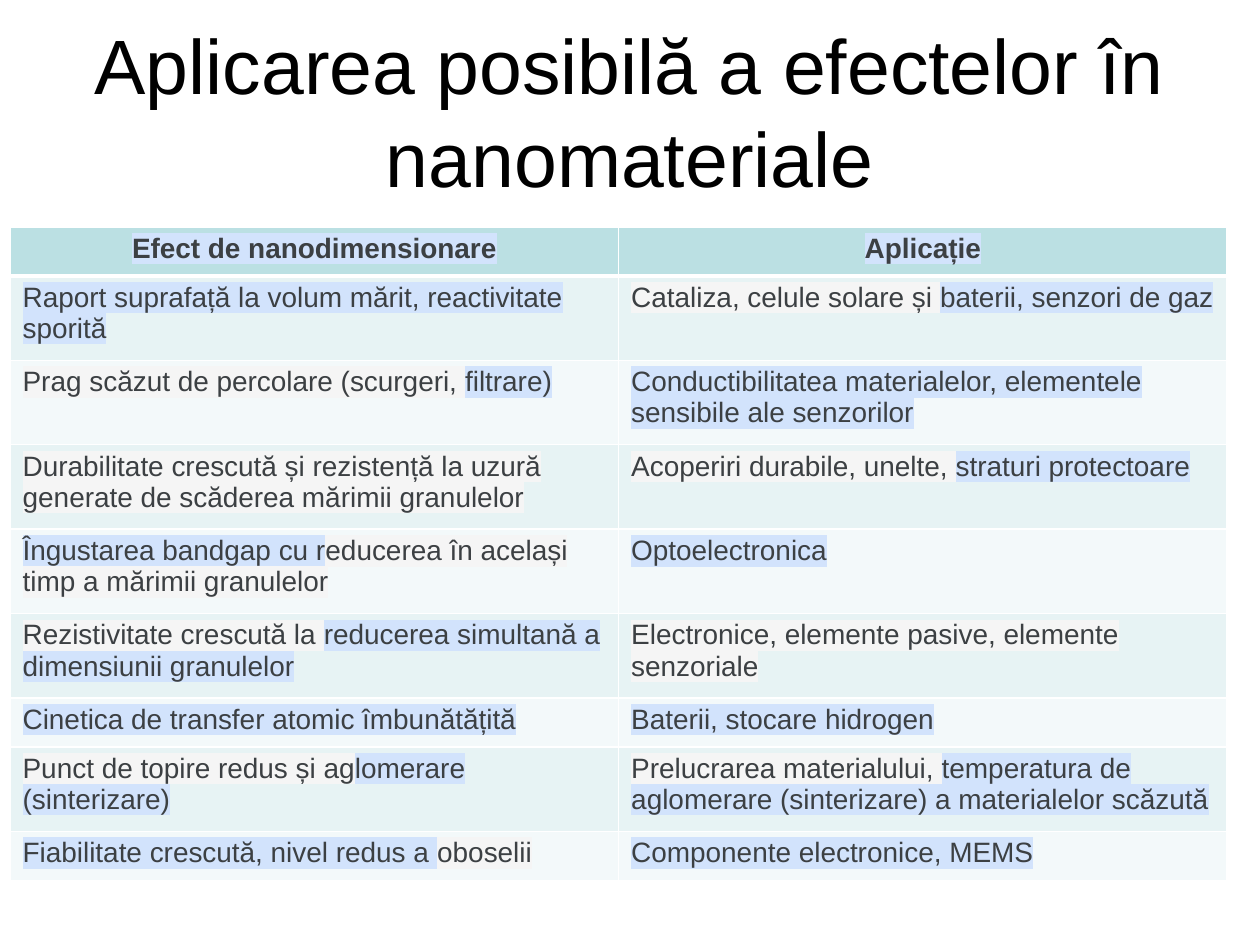
from typing import NamedTuple

from lxml.etree import SubElement
from pptx import Presentation
from pptx.dml.color import RGBColor
from pptx.enum.text import MSO_ANCHOR, MSO_AUTO_SIZE, PP_ALIGN
from pptx.oxml import parse_xml
from pptx.oxml.ns import nsdecls, qn
from pptx.util import Inches, Pt

FONT = "Arial"
BLUE, GRAY = "D2E3FC", "F5F5F5"
HEADER_FILL, BAND_FILLS = "BBE0E3", ("E7F3F4", "F3F9FA")
SHORT, TALL = 0.39, 0.67
COL_WIDTH = 4.83


class Span(NamedTuple):
    text: str
    highlight: str = BLUE


class Row(NamedTuple):
    height: float
    effect: list[Span]
    use: list[Span]


HEADER = Row(SHORT, [Span("Efect de nanodimensionare")], [Span("Aplicație")])
ROWS = [
    Row(TALL, [Span("Raport suprafață la volum mărit, reactivitate sporită")],
        [Span("Cataliza, celule solare și ", GRAY), Span("baterii, senzori de gaz")]),
    Row(TALL, [Span("Prag scăzut de percolare (scurgeri, ", GRAY), Span("filtrare)")],
        [Span("Conductibilitatea materialelor, elementele sensibile ale senzorilor")]),
    Row(TALL, [Span("Durabilitate crescută și rezistență la uzură generate de scăderea "
                    "mărimii granulelor", GRAY)],
        [Span("Acoperiri durabile, unelte, ", GRAY), Span("straturi protectoare")]),
    Row(TALL, [Span("Îngustarea bandgap cu r"),
               Span("educerea în același timp a mărimii granulelor", GRAY)],
        [Span("Optoelectronica")]),
    Row(TALL, [Span("Rezistivitate crescută la ", GRAY),
               Span("reducerea simultană a dimensiunii granulelor")],
        [Span("Electronice, elemente pasive, elemente senzoriale", GRAY)]),
    Row(SHORT, [Span("Cinetica de transfer atomic îmbunătățită")],
        [Span("Baterii, stocare hidrogen")]),
    Row(TALL, [Span("Punct de topire redus și ag", GRAY), Span("lomerare (sinterizare)")],
        [Span("Prelucrarea materialului, ", GRAY),
         Span("temperatura de aglomerare (sinterizare) a materialelor scăzută")]),
    Row(SHORT, [Span("Fiabilitate crescută, nivel redus a "), Span("oboselii", GRAY)],
        [Span("Componente electronice, MEMS")]),
]


def rgb(color: str) -> RGBColor:
    return RGBColor.from_string(color)


def format_font(font, color: str, **values) -> None:
    font.color.rgb = rgb(color)
    for name, value in values.items():
        setattr(font, name, value)


def add_span(p, span: Span, bold: bool) -> None:
    r = p.add_run()
    r.text = span.text
    format_font(r.font, "3C4043", size=Pt(16), bold=bold)
    # The highlight has to stand between the fill and the typeface.
    mark = SubElement(r.font._element, qn("a:highlight"))
    SubElement(mark, qn("a:srgbClr"), val=span.highlight)
    r.font.name = FONT


def add_borders(cell, widths: dict[str, float]) -> None:
    tc_pr = cell._tc.get_or_add_tcPr()
    for i, (side, width) in enumerate(widths.items()):
        tc_pr.insert(i, parse_xml(
            f'<a:ln{side} {nsdecls("a")} w="{Pt(width)}"><a:solidFill>'
            f'<a:srgbClr val="FFFFFF"/></a:solidFill></a:ln{side}>'))


def fill_cell(cell, spans: list[Span], fill: str, is_header: bool, below_header: bool) -> None:
    cell.fill.solid()
    cell.fill.fore_color.rgb = rgb(fill)
    add_borders(cell, {"L": 1, "R": 1, "T": 3 if below_header else 1,
                       "B": 3 if is_header else 1})
    p = cell.text_frame.paragraphs[0]
    p.alignment = PP_ALIGN.CENTER if is_header else PP_ALIGN.LEFT
    for span in spans:
        add_span(p, span, is_header)


def add_title(s, text: str) -> None:
    sp = s.shapes.title
    box = {"left": 0.5, "top": 0.25, "width": 9, "height": 1.25}
    for name, value in box.items():
        setattr(sp, name, Inches(value))
    tf = sp.text_frame
    tf.text = text
    tf.word_wrap = True
    tf.auto_size = MSO_AUTO_SIZE.NONE
    tf.vertical_anchor = MSO_ANCHOR.MIDDLE
    p = tf.paragraphs[0]
    p.alignment = PP_ALIGN.CENTER
    format_font(p.runs[0].font, "000000", size=Pt(44), name=FONT)


def add_effects_table(s, rows: list[Row]) -> None:
    height = sum(row.height for row in rows)
    table = s.shapes.add_table(len(rows), 2, Inches(0.08), Inches(1.8),
                               Inches(2 * COL_WIDTH), Inches(height)).table
    table.horz_banding = False
    for column in table.columns:
        column.width = Inches(COL_WIDTH)
    for i, row in enumerate(rows):
        table.rows[i].height = Inches(row.height)
        fill = BAND_FILLS[(i - 1) % 2] if i else HEADER_FILL
        for j, spans in enumerate((row.effect, row.use)):
            fill_cell(table.cell(i, j), spans, fill, i == 0, i == 1)


def main() -> None:
    prs = Presentation()
    prs.slide_width, prs.slide_height = Inches(10), Inches(7.5)
    s = prs.slides.add_slide(prs.slide_layouts.get_by_name("Title Only"))
    add_title(s, "Aplicarea posibilă a efectelor în nanomateriale")
    add_effects_table(s, [HEADER, *ROWS])
    prs.save("out.pptx")


if __name__ == "__main__":
    main()
